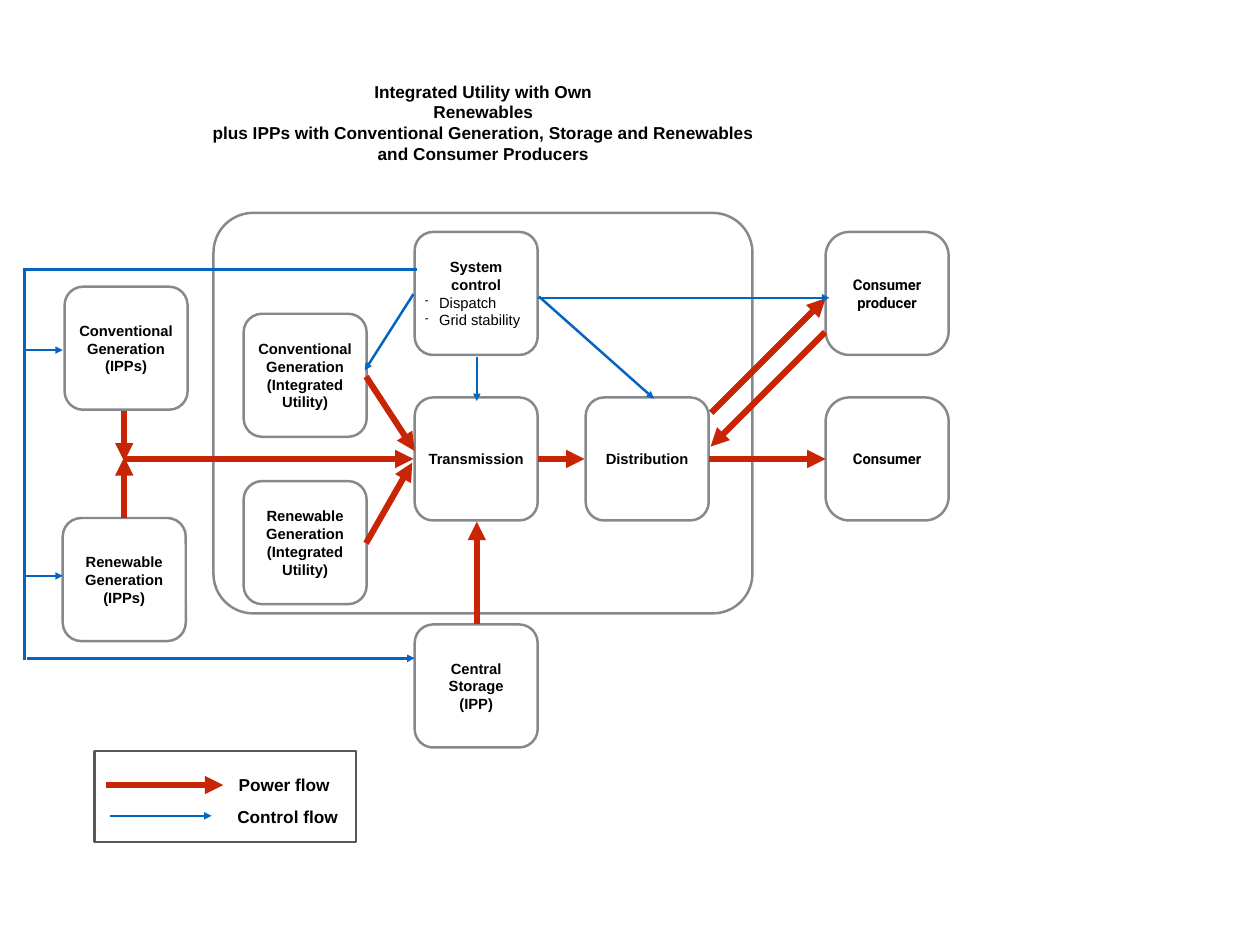
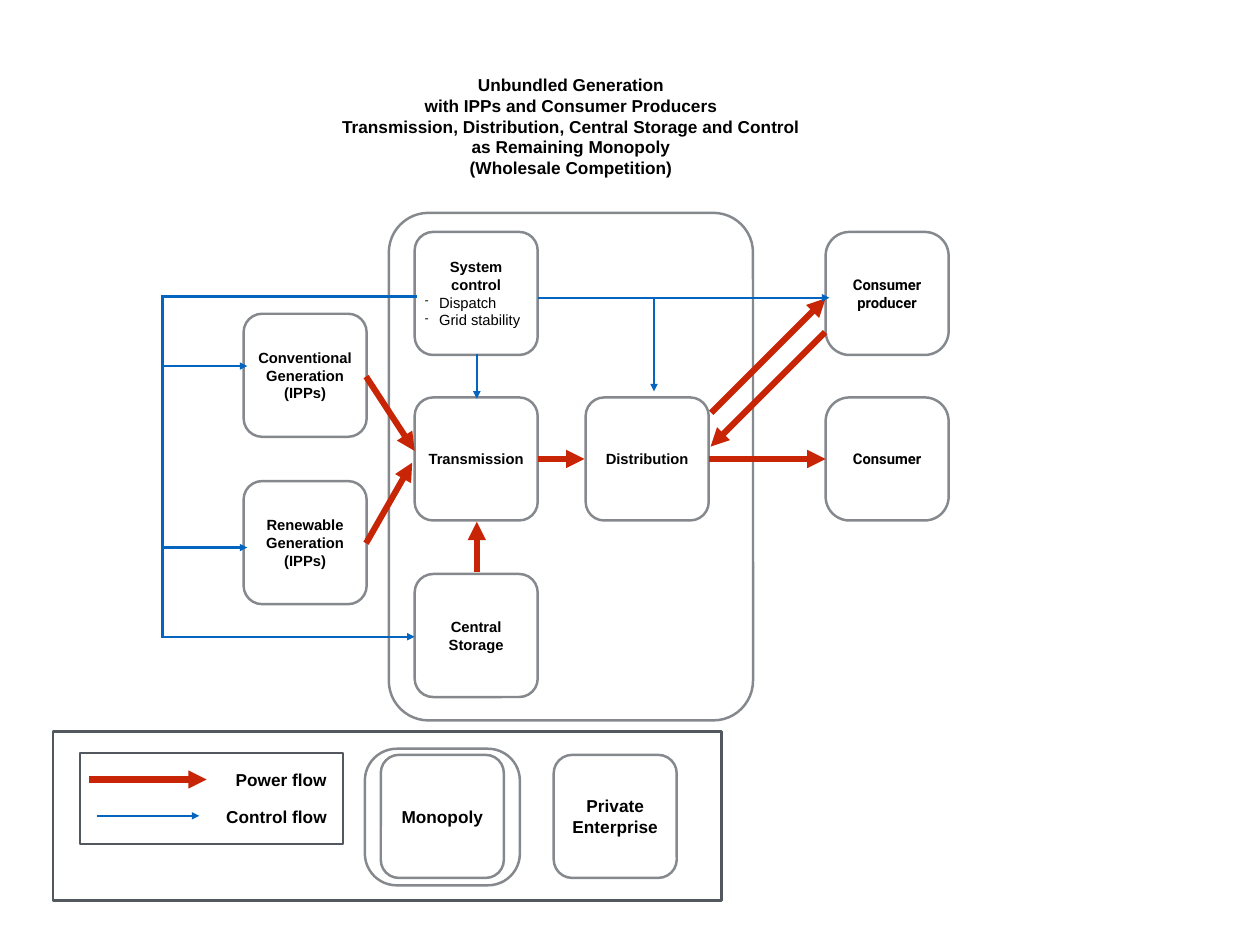
from pptx import Presentation
from pptx.dml.color import RGBColor
from pptx.enum.shapes import MSO_CONNECTOR, MSO_SHAPE
from pptx.enum.text import MSO_ANCHOR, MSO_AUTO_SIZE, PP_ALIGN
from pptx.oxml.ns import qn
from pptx.util import Pt
from lxml import etree

ROUND, RECT = MSO_SHAPE.ROUNDED_RECTANGLE, MSO_SHAPE.RECTANGLE
STRAIGHT = MSO_CONNECTOR.STRAIGHT
LEFT, CENTER = PP_ALIGN.LEFT, PP_ALIGN.CENTER
MIDDLE, GROW = MSO_ANCHOR.MIDDLE, MSO_AUTO_SIZE.SHAPE_TO_FIT_TEXT

# Shared style
BLACK, GREY, DARK = "000000", "85888D", "53585F"
POWER = {"color": "C82506", "width": 5, "arrow": True}
CONTROL = {"color": "0365C0", "width": 2, "arrow": True}
PLAIN = {"color": "0365C0", "width": 2, "arrow": False}
BOX_FONT = {"name": "Arial", "size": Pt(12), "bold": True}
CONSUMER_FONT = {"name": "Roboto", "size": Pt(12), "bold": True}
LABEL_FONT = {"name": "Arial", "size": Pt(14), "bold": True}
INSETS = ("margin_left", "margin_top", "margin_right", "margin_bottom")

# Shared grid: square boxes in four columns
SIDE = 100
GEN, GRID, DIST, USER = 198, 337, 476, 671
TOP, MID, CONV, RENEW = 188.5, 323, 255, 391


def write(sp, lines, font):
    """Write one paragraph per line; a leading "- " makes a light list item."""
    tf = sp.text_frame
    tf.vertical_anchor = MIDDLE
    for side in INSETS:
        setattr(tf, side, Pt(4))
    for i, line in enumerate(lines):
        p = tf.paragraphs[0] if i == 0 else tf.add_paragraph()
        item = line.startswith("- ")
        p.alignment = LEFT if item else CENTER
        r = p.add_run()
        r.text = line.removeprefix("- ")
        for key, value in font.items():
            setattr(r.font, key, value)
        r.font.color.rgb = RGBColor.from_string(BLACK)
        if item:
            r.font.bold = False
            pPr = p._p.get_or_add_pPr()
            pPr.set("marL", str(Pt(11.5)))
            pPr.set("indent", str(-Pt(11.5)))
            etree.SubElement(pPr, qn("a:buSzPct")).set("val", "75000")
            etree.SubElement(pPr, qn("a:buChar")).set("char", "-")


def outline(s, kind, x, y, w, h, color, adj=None):
    """Add an unfilled outlined shape."""
    sp = s.shapes.add_shape(kind, Pt(x), Pt(y), Pt(w), Pt(h))
    sp.shadow.inherit = False
    sp.fill.background()
    sp.line.color.rgb = RGBColor.from_string(color)
    sp.line.width = Pt(2)
    if adj is not None:
        sp.adjustments[0] = adj
    return sp


# Parts on both slides: x, y, corner, font, lines
COMMON_BOXES = [
    (USER, TOP, 0.194, CONSUMER_FONT, ["Consumer producer"]),
    (USER, MID, 0.194, CONSUMER_FONT, ["Consumer"]),
    (GRID, TOP, 0.15, BOX_FONT, ["System control", "- Dispatch", "- Grid stability"]),
    (GRID, MID, 0.15, BOX_FONT, ["Transmission"]),
    (DIST, MID, 0.15, BOX_FONT, ["Distribution"]),
]
# Style, start x, start y, end x, end y
COMMON_FLOWS = [
    (POWER, 576, 373, 671, 373),
    (POWER, 437, 373, 475, 373),
    (POWER, 297.5, 441.5, 335, 376),
    (POWER, 297.5, 306, 337, 366.5),
    (POWER, 670.5, 270, 577.5, 363),
    (POWER, 578, 335.5, 671, 242.5),
    (CONTROL, 437, 242, 674, 242),
]

SLIDES = [
    {
        "frames": [(ROUND, 173.5, 173, 438, 325.5, GREY, 0.099),
                   (RECT, 77, 610.5, 212.5, 74, DARK)],
        "boxes": [
            (GEN, CONV, 0.15, BOX_FONT, ["Conventional Generation", "(Integrated Utility)"]),
            (GEN, RENEW, 0.15, BOX_FONT, ["Renewable Generation", "(Integrated Utility)"]),
            (52.5, 233, 0.15, BOX_FONT, ["Conventional Generation", "(IPPs)"]),
            (51, 421, 0.15, BOX_FONT, ["Renewable Generation", "(IPPs)"]),
            (GRID, 507.5, 0.15, BOX_FONT, ["Central Storage", "(IPP)"]),
        ],
        "flows": [
            (POWER, 387.5, 507, 387.5, 424),
            (POWER, 100, 373, 336, 373),
            (POWER, 101, 421, 101, 371.5),
            (POWER, 101, 334, 101, 375),
            (CONTROL, 336, 239, 296.5, 301),
            (CONTROL, 438, 241, 531.5, 324),
            (CONTROL, 387.5, 290, 387.5, 326),
            (CONTROL, 20, 284.5, 51, 284.5),
            (CONTROL, 20, 468, 51, 468),
            (CONTROL, 22, 535, 337, 535),
            (PLAIN, 20, 219, 339, 219),
            (PLAIN, 20, 536.5, 20, 217.5),
            # Legend samples
            (POWER, 86.5, 638, 181.5, 638),
            (CONTROL, 89.5, 663, 172, 663),
        ],
        "labels": [
            (167, 61, 451.5, 76.5, ["Integrated Utility with Own", "Renewables",
             "plus IPPs with Conventional Generation, Storage and Renewables",
             "and Consumer Producers"]),
            (189.5, 625, 83, 25, ["Power flow"]),
            (188.5, 651, 90.5, 25, ["Control flow"]),
        ],
    },
    {
        "frames": [(ROUND, 316, 173, 296, 412.5, GREY, 0.109),
                   (RECT, 65, 612, 214, 74, DARK),
                   (RECT, 43, 594.5, 543.5, 137.5, DARK),
                   (ROUND, 296.5, 608.5, 126, 111, GREY, 0.233)],
        "boxes": [
            (GEN, CONV, 0.15, BOX_FONT, ["Conventional Generation (IPPs)"]),
            (GEN, RENEW, 0.15, BOX_FONT, ["Renewable Generation", "(IPPs)"]),
            (GRID, 466.5, 0.15, BOX_FONT, ["Central Storage"]),
            (309.5, 613.5, 0.147, LABEL_FONT, ["Monopoly"]),
            (450, 613.5, 0.15, LABEL_FONT, ["Private", "Enterprise"]),
        ],
        "flows": [
            (POWER, 387.5, 465, 387.5, 424),
            (CONTROL, 133, 297.5, 201, 297.5),
            (CONTROL, 133, 445, 201, 445),
            (CONTROL, 531.5, 242, 531.5, 318),
            (CONTROL, 387.5, 288, 387.5, 324),
            (CONTROL, 130.5, 517.5, 337, 517.5),
            (PLAIN, 132.5, 241, 339, 241),
            (PLAIN, 132, 518.5, 132, 240),
            # Legend samples
            (POWER, 72.5, 633.5, 168, 633.5),
            (CONTROL, 79, 663, 162, 663),
        ],
        "labels": [
            (272, 56, 384, 93, ["Unbundled Generation", "with IPPs and Consumer Producers",
             "Transmission, Distribution, Central Storage and Control",
             "as Remaining Monopoly", "(Wholesale Competition)"]),
            (187, 621.5, 83, 25, ["Power flow"]),
            (179.5, 651, 90.5, 25, ["Control flow"]),
        ],
    },
]

prs = Presentation()
prs.slide_width, prs.slide_height = Pt(1024), Pt(768)

for parts in SLIDES:
    s = prs.slides.add_slide(prs.slide_layouts[6])

    # Utility frame and legend frames
    for frame in parts["frames"]:
        outline(s, *frame)

    # Boxes
    for x, y, adj, font, lines in COMMON_BOXES + parts["boxes"]:
        write(outline(s, ROUND, x, y, SIDE, SIDE, GREY, adj), lines, font)

    # Power and control flows
    for style, x1, y1, x2, y2 in COMMON_FLOWS + parts["flows"]:
        c = s.shapes.add_connector(STRAIGHT, Pt(x1), Pt(y1), Pt(x2), Pt(y2))
        c.line.color.rgb = RGBColor.from_string(style["color"])
        c.line.width = Pt(style["width"])
        spPr = c._element.spPr
        if style["arrow"]:
            etree.SubElement(spPr.find(qn("a:ln")), qn("a:tailEnd")).set("type", "triangle")
        etree.SubElement(spPr, qn("a:effectLst"))

    # Title and legend labels
    for x, y, w, h, lines in parts["labels"]:
        sp = s.shapes.add_textbox(Pt(x), Pt(y), Pt(w), Pt(h))
        sp.text_frame.word_wrap = False
        sp.text_frame.auto_size = GROW
        write(sp, lines, LABEL_FONT)

prs.save("out.pptx")
